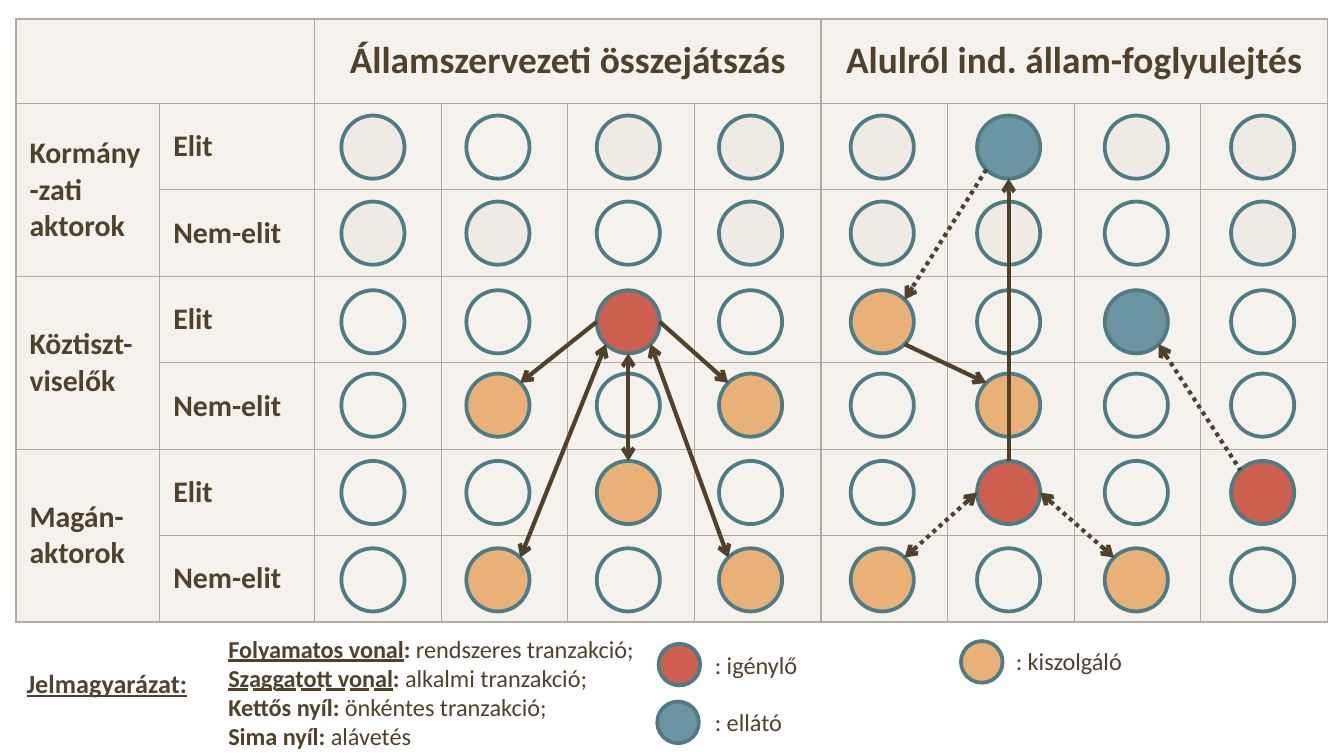
from dataclasses import dataclass
from math import sqrt
from typing import Optional

from pptx import Presentation
from pptx.dml.color import RGBColor
from pptx.enum.dml import MSO_LINE
from pptx.enum.shapes import MSO_CONNECTOR, MSO_SHAPE
from pptx.enum.text import MSO_ANCHOR, MSO_AUTO_SIZE, MSO_UNDERLINE, PP_ALIGN
from pptx.oxml.ns import qn
from pptx.oxml.xmlchemy import OxmlElement as new_element
from pptx.util import Inches, Pt

WIDTH, HEIGHT = Inches(10), Inches(5.625)
UNIT = WIDTH // 1000
FONT = "Calibri"

INK = RGBColor(0x50, 0x41, 0x2B)
LEGEND_INK = RGBColor(0x50, 0x41, 0x31)
BORDER = RGBColor(0xB3, 0xA9, 0x9D)
SAND = RGBColor(0xEF, 0xEA, 0xE4)
RIM = RGBColor(0x4D, 0x7C, 0x85)
RED = RGBColor(0xCD, 0x5F, 0x50)
BLUE = RGBColor(0x6B, 0x95, 0xA1)
ORANGE = RGBColor(0xE9, 0xB1, 0x78)

ROLE_COLOURS = {".": None, "g": SAND, "R": RED, "B": BLUE, "O": ORANGE}
NODE_SIZE, KEY_SIZE = 47, 31
NODE_TOPS = (86, 150, 216, 278, 343, 408)
GROUP_EDGES = (0, 2, 6, 10)
TABLE_ROWS = 7

DIAGONAL = 1 / sqrt(2)
DIRECTIONS = {
    "N": (0, -1), "S": (0, 1), "W": (-1, 0), "E": (1, 0),
    "NW": (-DIAGONAL, -DIAGONAL), "NE": (DIAGONAL, -DIAGONAL),
    "SW": (-DIAGONAL, DIAGONAL), "SE": (DIAGONAL, DIAGONAL),
}


@dataclass(frozen=True)
class Anchor:
    column: int
    row: int
    side: str


@dataclass(frozen=True)
class Transaction:
    start: Anchor
    end: Anchor
    dotted: bool = False
    head: bool = False
    tail: bool = True


@dataclass(frozen=True)
class Network:
    lefts: tuple[int, ...]
    roles: tuple[str, ...]
    transactions: tuple[Transaction, ...]


@dataclass(frozen=True)
class Words:
    text: str
    size: float = 13
    bold: bool = False
    underline: Optional[MSO_UNDERLINE] = None
    colour: RGBColor = INK
    break_after: bool = False


@dataclass(frozen=True)
class Key:
    left: int
    top: int
    colour: RGBColor
    label: str
    label_box: tuple[int, int, int, int]


CAPTURE = Network(
    (633, 727, 822, 916),
    ("gBgg", "gg.g", "O.B.", ".O..", ".R.R", "O.O."),
    (
        Transaction(Anchor(1, 4, "W"), Anchor(0, 5, "NE"), dotted=True, head=True),
        Transaction(Anchor(1, 4, "E"), Anchor(2, 5, "NW"), dotted=True, head=True),
        Transaction(Anchor(1, 4, "N"), Anchor(1, 0, "S")),
        Transaction(Anchor(2, 2, "SE"), Anchor(3, 4, "NW"), dotted=True, head=True, tail=False),
        Transaction(Anchor(1, 0, "SW"), Anchor(0, 2, "NE"), dotted=True),
        Transaction(Anchor(0, 2, "SE"), Anchor(1, 3, "NW")),
    ),
)
COLLUSION = Network(
    (254, 347, 444, 535),
    ("g.gg", "gg.g", "..R.", ".O.O", "..O.", ".O.O"),
    (
        Transaction(Anchor(2, 2, "SW"), Anchor(1, 5, "NE"), head=True),
        Transaction(Anchor(3, 5, "NW"), Anchor(2, 2, "SE"), head=True),
        Transaction(Anchor(2, 2, "W"), Anchor(1, 3, "NE")),
        Transaction(Anchor(2, 2, "E"), Anchor(3, 3, "NW")),
        Transaction(Anchor(2, 4, "N"), Anchor(2, 2, "S"), head=True),
    ),
)
KEYS = (
    Key(490, 479, RED, ": igénylő", (522, 479, 82, 32)),
    Key(715, 477, ORANGE, ": kiszolgáló", (746, 476, 100, 32)),
    Key(489, 522, BLUE, ": ellátó", (522, 521, 71, 32)),
)
LINE_MEANINGS = (
    (Words("Folyamatos vonal", bold=True, underline=MSO_UNDERLINE.SINGLE_LINE),
     Words(": ", bold=True), Words("rendszeres tranzakció;")),
    (Words("Szaggatott vonal", bold=True, underline=MSO_UNDERLINE.DASH_LONG_HEAVY_LINE),
     Words(": ", bold=True), Words("alkalmi tranzakció;", break_after=True),
     Words("Kettős nyíl: ", bold=True), Words("önkéntes tranzakció;")),
    (Words("Sima nyíl: ", bold=True), Words("alávetés")),
)


def grid(*lengths: float) -> list[int]:
    return [round(length * UNIT) for length in lengths]


def add_words(paragraph, words: Words) -> None:
    run = paragraph.add_run()
    run.text = words.text
    font = run.font
    font.name, font.size, font.bold = FONT, Pt(words.size), words.bold
    font.color.rgb = words.colour
    if words.underline is not None:
        font.underline = words.underline
    if words.break_after:
        paragraph.add_line_break()


def add_text(slide, box: tuple[int, int, int, int], lines, wrap: bool = True) -> None:
    frame = slide.shapes.add_textbox(*grid(*box)).text_frame
    frame.word_wrap = wrap
    frame.auto_size = MSO_AUTO_SIZE.SHAPE_TO_FIT_TEXT
    frame.vertical_anchor = MSO_ANCHOR.MIDDLE
    for index, line in enumerate(lines):
        paragraph = frame.add_paragraph() if index else frame.paragraphs[0]
        for words in line:
            add_words(paragraph, words)


def add_circle(slide, left: int, top: int, size: int, colour: Optional[RGBColor]) -> None:
    circle = slide.shapes.add_shape(MSO_SHAPE.OVAL, *grid(left, top, size, size))
    circle.shadow.inherit = False
    if colour is None:
        circle.fill.background()
    else:
        circle.fill.solid()
        circle.fill.fore_color.rgb = colour
    circle.line.color.rgb = RIM
    circle.line.width = Pt(2)


def locate(network: Network, anchor: Anchor) -> list[int]:
    across, down = DIRECTIONS[anchor.side]
    radius = NODE_SIZE / 2
    return grid(network.lefts[anchor.column] + radius * (1 + across),
                NODE_TOPS[anchor.row] + radius * (1 + down))


def add_transaction(slide, network: Network, deal: Transaction) -> None:
    arrow = slide.shapes.add_connector(
        MSO_CONNECTOR.STRAIGHT, *locate(network, deal.start), *locate(network, deal.end))
    arrow.line.color.rgb = INK
    arrow.line.width = Pt(2.25)
    if deal.dotted:
        arrow.line.dash_style = MSO_LINE.ROUND_DOT
    outline = arrow.line._get_or_add_ln()
    for tag, shown in (("a:headEnd", deal.head), ("a:tailEnd", deal.tail)):
        if shown:
            tip = new_element(tag)
            tip.set("type", "arrow")
            outline.append(tip)
    arrow._element.spPr.append(new_element("a:effectLst"))


def add_network(slide, network: Network) -> None:
    for top, roles in zip(NODE_TOPS, network.roles):
        for left, role in zip(network.lefts, roles):
            add_circle(slide, left, top, NODE_SIZE, ROLE_COLOURS[role])
    for deal in network.transactions:
        add_transaction(slide, network, deal)


def style_cell(cell, row: int, column: int) -> None:
    properties = cell._tc.get_or_add_tcPr()
    thick_edges = {
        "a:lnL": column in GROUP_EDGES,
        "a:lnR": column + cell.span_width in GROUP_EDGES,
        "a:lnT": row == 0,
        "a:lnB": row + cell.span_height == TABLE_ROWS,
    }
    for tag, thick in thick_edges.items():
        edge = new_element(tag)
        edge.set("w", str(Pt(1 if thick else 0.5)))
        paint = new_element("a:solidFill")
        colour = new_element("a:srgbClr")
        colour.set("val", str(BORDER))
        paint.append(colour)
        edge.append(paint)
        properties.append(edge)
    cell.fill.solid()
    cell.fill.fore_color.rgb = SAND
    alpha = new_element("a:alpha")
    alpha.set("val", "60000")
    properties.find(qn("a:solidFill")).find(qn("a:srgbClr")).append(alpha)
    cell.vertical_anchor = MSO_ANCHOR.MIDDLE


def add_actor_table(slide) -> None:
    table = slide.shapes.add_table(TABLE_ROWS, 10, *grid(12, 14, 976, 449)).table
    table.first_row = table.horz_banding = False
    for column, width in zip(table.columns, grid(107, 115, *[94.25] * 8)):
        column.width = width
    for row, height in zip(table.rows, grid(63, *[64.33] * 6)):
        row.height = height
    for first, after in zip(GROUP_EDGES, GROUP_EDGES[1:]):
        table.cell(0, first).merge(table.cell(0, after - 1))
    labels = {(0, 2): "Államszervezeti összejátszás", (0, 6): "Alulról ind. állam-foglyulejtés"}
    for index, actor in enumerate(("Kormány-zati aktorok", "Köztiszt-viselők", "Magán-aktorok")):
        row = 1 + 2 * index
        table.cell(row, 0).merge(table.cell(row + 1, 0))
        labels.update({(row, 0): actor, (row, 1): "Elit", (row + 1, 1): "Nem-elit"})
    for row in range(TABLE_ROWS):
        for column in range(10):
            style_cell(table.cell(row, column), row, column)
    for (row, column), label in labels.items():
        paragraph = table.cell(row, column).text_frame.paragraphs[0]
        paragraph.alignment = PP_ALIGN.LEFT if row else PP_ALIGN.CENTER
        add_words(paragraph, Words(label, 16 if row else 20, bold=True))


def add_legend(slide) -> None:
    add_text(slide, (160, 466, 331, 98), LINE_MEANINGS)
    for key in KEYS:
        add_circle(slide, key.left, key.top, KEY_SIZE, key.colour)
        add_text(slide, key.label_box, [[Words(key.label)]], wrap=False)
    title = Words("Jelmagyarázat:", 14, True, MSO_UNDERLINE.SINGLE_LINE, LEGEND_INK)
    add_text(slide, (10, 491, 150, 34), [[title]])


def main() -> None:
    deck = Presentation()
    deck.slide_width, deck.slide_height = WIDTH, HEIGHT
    slide = deck.slides.add_slide(deck.slide_layouts[6])
    add_actor_table(slide)
    add_network(slide, CAPTURE)
    add_network(slide, COLLUSION)
    add_legend(slide)
    deck.save("out.pptx")


if __name__ == "__main__":
    main()
